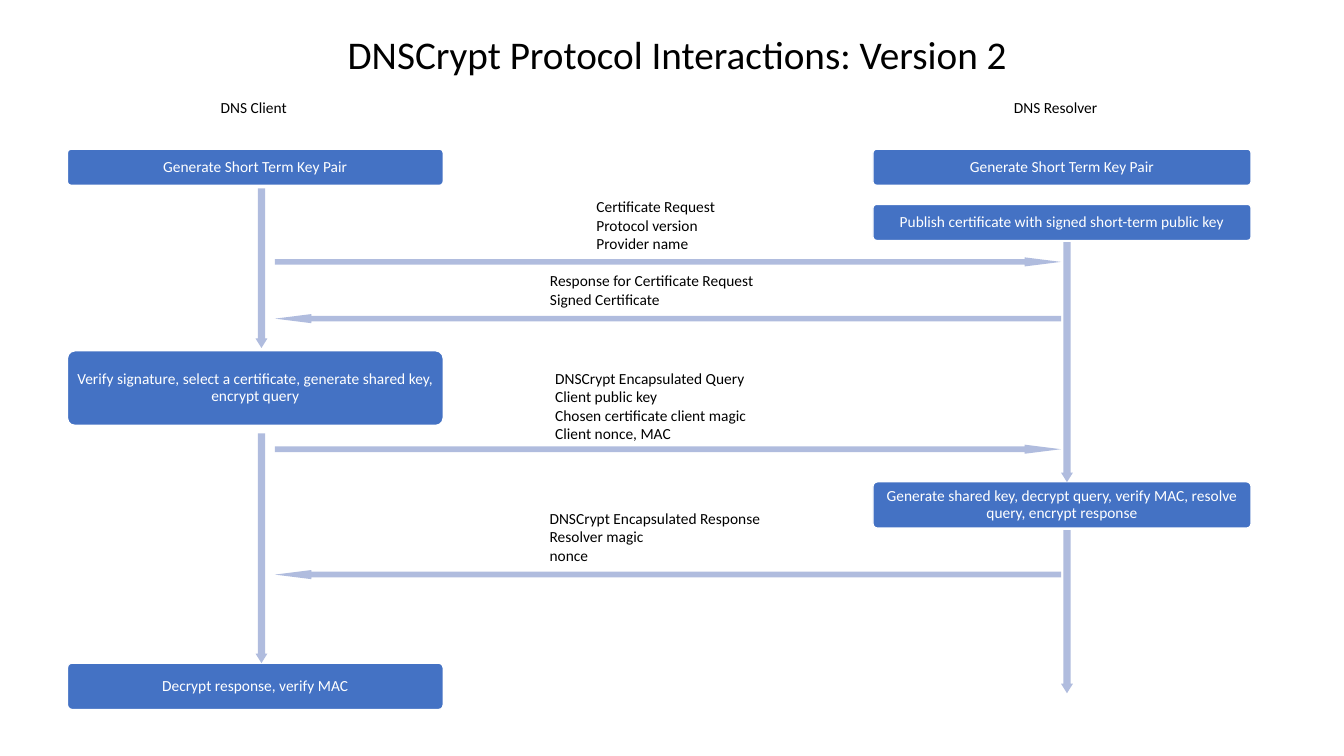
from dataclasses import dataclass

from pptx import Presentation
from pptx.dml.color import RGBColor
from pptx.enum.shapes import MSO_SHAPE
from pptx.enum.text import MSO_ANCHOR, MSO_AUTO_SIZE, PP_ALIGN
from pptx.util import Cm, Pt


@dataclass(frozen=True)
class Theme:
    font: str = "Calibri"
    title_size: int = 28
    body_size: int = 11
    text: RGBColor = RGBColor(0x00, 0x00, 0x00)
    light: RGBColor = RGBColor(0xFF, 0xFF, 0xFF)
    box: RGBColor = RGBColor(0x44, 0x72, 0xC4)
    arrow: RGBColor = RGBColor(0xB0, 0xBC, 0xDE)


def write_text(frame, text, *, font, size, color, align=PP_ALIGN.LEFT,
               anchor=MSO_ANCHOR.TOP, spacing=None, inset=None):
    """Fill a text frame, one paragraph for each line of text."""
    frame.word_wrap = True
    frame.vertical_anchor = anchor
    if inset is not None:
        frame.margin_left = frame.margin_right = Cm(inset)
        frame.margin_top = frame.margin_bottom = Cm(inset)
    for index, line in enumerate(text.split("\n")):
        paragraph = frame.paragraphs[0] if index == 0 else frame.add_paragraph()
        paragraph.alignment = align
        paragraph.line_spacing = spacing
        run = paragraph.add_run()
        run.text = line
        run.font.name = font
        run.font.size = Pt(size)
        run.font.color.rgb = color


class SequenceSlide:
    """Draws the parts of a sequence diagram; all lengths are in centimetres."""

    FIRST_LINE_HEIGHT = 0.74
    LINE_HEIGHT = 0.47
    SHAFT_SHARE = 0.62

    def __init__(self, presentation, theme):
        self.theme = theme
        self.slide = presentation.slides.add_slide(presentation.slide_layouts[5])

    def title(self, text, left, top, width, height):
        title = self.slide.shapes.title
        title.left, title.top = Cm(left), Cm(top)
        title.width, title.height = Cm(width), Cm(height)
        write_text(title.text_frame, text, font=self.theme.font,
                   size=self.theme.title_size, color=self.theme.text,
                   align=PP_ALIGN.CENTER, anchor=MSO_ANCHOR.MIDDLE, spacing=0.9)
        title.text_frame.auto_size = MSO_AUTO_SIZE.NONE

    def label(self, text, left, top, width):
        height = self.FIRST_LINE_HEIGHT + text.count("\n") * self.LINE_HEIGHT
        label = self.slide.shapes.add_textbox(Cm(left), Cm(top), Cm(width), Cm(height))
        write_text(label.text_frame, text, font=self.theme.font,
                   size=self.theme.body_size, color=self.theme.text)
        label.text_frame.auto_size = MSO_AUTO_SIZE.SHAPE_TO_FIT_TEXT

    def filled_shape(self, kind, left, top, width, height, color):
        shape = self.slide.shapes.add_shape(kind, Cm(left), Cm(top), Cm(width), Cm(height))
        shape.shadow.inherit = False
        shape.fill.solid()
        shape.fill.fore_color.rgb = color
        shape.line.fill.background()
        return shape

    def step(self, text, left, top, width, height):
        box = self.filled_shape(MSO_SHAPE.ROUNDED_RECTANGLE, left, top, width, height,
                                self.theme.box)
        box.adjustments[0] = 0.1
        box.line.color.rgb = self.theme.light
        box.line.width = Pt(1)
        write_text(box.text_frame, text, font=self.theme.font,
                   size=self.theme.body_size, color=self.theme.light,
                   align=PP_ALIGN.CENTER, anchor=MSO_ANCHOR.MIDDLE,
                   spacing=0.9, inset=0.15)

    def arrow(self, kind, left, top, width, height, head):
        arrow = self.filled_shape(kind, left, top, width, height, self.theme.arrow)
        arrow.adjustments[0] = self.SHAFT_SHARE
        arrow.adjustments[1] = head / min(width, height)

    def lifeline(self, center, top, length, thickness=0.3):
        self.arrow(MSO_SHAPE.DOWN_ARROW, center - thickness / 2, top,
                   thickness, length, head=0.24)

    def message(self, kind, left, center, length, thickness=0.23):
        self.arrow(kind, left, center - thickness / 2, length, thickness, head=0.92)


CLIENT = {"left": 1.7, "width": 9.47}
RESOLVER = {"left": 22, "width": 9.53}
CLIENT_LINE, RESOLVER_LINE = 6.59, 26.89
MESSAGE_LEFT, MESSAGE_LENGTH = 6.93, 19.81

STEPS = [  # side, top, height, text
    (CLIENT, 3.76, 0.91, "Generate Short Term Key Pair"),
    (CLIENT, 8.84, 1.88,
     "Verify signature, select a certificate, generate shared key, encrypt query"),
    (CLIENT, 16.71, 1.17, "Decrypt response, verify MAC"),
    (RESOLVER, 3.76, 0.91, "Generate Short Term Key Pair"),
    (RESOLVER, 5.15, 0.91, "Publish certificate with signed short-term public key"),
    (RESOLVER, 12.14, 1.17,
     "Generate shared key, decrypt query, verify MAC, resolve query, encrypt response"),
]
LIFELINES = [  # center, top, length
    (CLIENT_LINE, 4.75, 4.02),
    (CLIENT_LINE, 10.92, 5.79),
    (RESOLVER_LINE, 6.1, 6.05),
    (RESOLVER_LINE, 13.36, 4.11),
]
MESSAGES = [  # direction, arrow center, label left, label top, label width, text
    (MSO_SHAPE.RIGHT_ARROW, 6.6, 14.78, 4.85, 4.57,
     "Certificate Request\nProtocol version\nProvider name"),
    (MSO_SHAPE.LEFT_ARROW, 8.03, 13.61, 6.71, 6.4,
     "Response for Certificate Request\nSigned Certificate"),
    (MSO_SHAPE.RIGHT_ARROW, 11.32, 13.74, 9.17, 5.64,
     "DNSCrypt Encapsulated Query\nClient public key\n"
     "Chosen certificate client magic\nClient nonce, MAC"),
    (MSO_SHAPE.LEFT_ARROW, 14.48, 13.6, 12.7, 6.32,
     "DNSCrypt Encapsulated Response\nResolver magic\nnonce"),
]


def main():
    presentation = Presentation()
    presentation.slide_width, presentation.slide_height = Cm(33.87), Cm(19.05)
    diagram = SequenceSlide(presentation, Theme())

    diagram.title("DNSCrypt Protocol Interactions: Version 2", 2.46, 0.84, 29.21, 1.17)
    diagram.label("DNS Client", 5.31, 2.36, 2.26)
    diagram.label("DNS Resolver", 25.3, 2.36, 2.92)
    for side, top, height, text in STEPS:
        diagram.step(text, top=top, height=height, **side)
    for center, top, length in LIFELINES:
        diagram.lifeline(center, top, length)
    for direction, center, left, top, width, text in MESSAGES:
        diagram.message(direction, MESSAGE_LEFT, center, MESSAGE_LENGTH)
        diagram.label(text, left, top, width)

    presentation.save("out.pptx")


if __name__ == "__main__":
    main()
